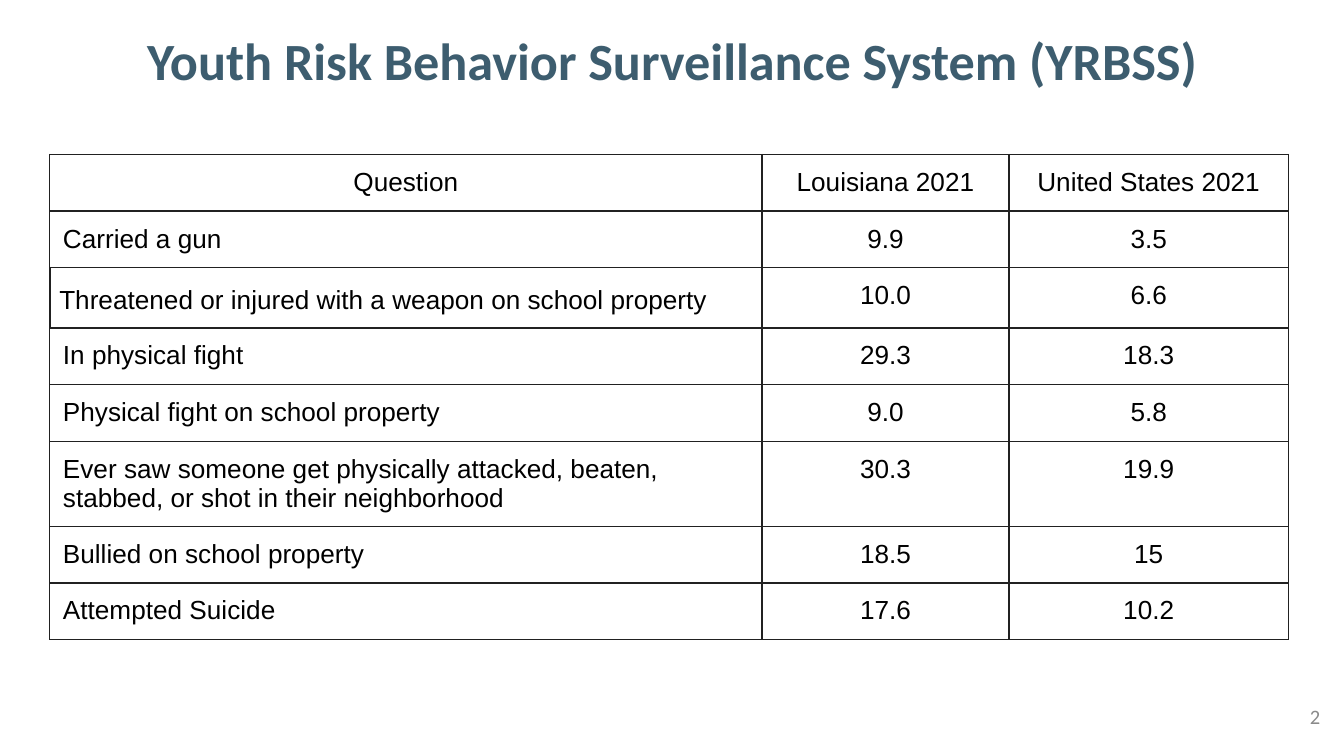
from typing import NamedTuple

from lxml.etree import SubElement
from pptx import Presentation
from pptx.dml.color import RGBColor
from pptx.enum.text import MSO_ANCHOR as Anchor, MSO_AUTO_SIZE as AutoSize, PP_ALIGN as Align
from pptx.oxml.ns import qn
from pptx.util import Cm, Pt

BORDER_COLOR = "212121"
COLUMN_WIDTHS = (13.46, 4.67, 5.28)
ROW_HEIGHT = 1.07
INSET = 0.25
TITLE_FORMAT = {"name": "Calibri", "size": Pt(28), "bold": True}
TABLE_FORMAT = {"name": "Arial", "size": Pt(14), "bold": False}
NUMBER_FORMAT = {"name": "Calibri", "size": Pt(11)}


class SurveyRow(NamedTuple):
    question: str
    louisiana: str
    united_states: str
    side_inset: float = INSET
    line_spacing: float = 1.0
    question_border: float = 0.75


HEADER = SurveyRow("Question", "Louisiana 2021", "United States 2021")
SURVEY = (
    SurveyRow("Carried a gun", "9.9", "3.5"),
    SurveyRow("Threatened or injured with a weapon on school property", "10.0", "6.6",
              side_inset=0.18, line_spacing=1.15, question_border=1),
    SurveyRow("In physical fight", "29.3", "18.3"),
    SurveyRow("Physical fight on school property", "9.0", "5.8"),
    SurveyRow("Ever saw someone get physically attacked, beaten, "
              "stabbed, or shot in their neighborhood", "30.3", "19.9"),
    SurveyRow("Bullied on school property", "18.5", "15"),
    SurveyRow("Attempted Suicide", "17.6", "10.2"),
)


def color(value: str) -> RGBColor:
    return RGBColor.from_string(value)


def write(frame, text: str, align, font_format: dict, text_color: str,
          line_spacing: float = 1.0) -> None:
    para = frame.paragraphs[0]
    para.alignment = align
    para.line_spacing = line_spacing
    span = para.add_run()
    span.text = text
    for name, value in font_format.items():
        setattr(span.font, name, value)
    span.font.color.rgb = color(text_color)


def set_borders(cell, width: float) -> None:
    """Draw all four cell edges; the lines must precede the fill in tcPr."""
    properties = cell._tc.get_or_add_tcPr()
    for position, edge in enumerate(("a:lnL", "a:lnR", "a:lnT", "a:lnB")):
        line = SubElement(properties, qn(edge), w=str(Pt(width)))
        fill = SubElement(line, qn("a:solidFill"))
        SubElement(fill, qn("a:srgbClr"), val=BORDER_COLOR)
        properties.insert(position, line)


def place(box, left: float, top: float, width: float, height: float) -> None:
    box.left, box.top, box.width, box.height = map(Cm, (left, top, width, height))


def add_title(page, text: str) -> None:
    title = page.shapes.title
    place(title, 0, 0, 25.4, 2.39)
    frame = title.text_frame
    frame.auto_size = AutoSize.NONE
    frame.vertical_anchor = Anchor.MIDDLE
    for side in ("left", "top", "right", "bottom"):
        setattr(frame, f"margin_{side}", Cm(INSET))
    write(frame, text, Align.CENTER, TITLE_FORMAT, "3D5D6F", 0.9)


def add_survey_table(page, rows: tuple[SurveyRow, ...]) -> None:
    table = page.shapes.add_table(
        len(rows), len(COLUMN_WIDTHS), Cm(0.94), Cm(2.92),
        Cm(sum(COLUMN_WIDTHS)), Cm(ROW_HEIGHT * len(rows))).table
    table.first_row = table.horz_banding = False
    for column, width in zip(table.columns, COLUMN_WIDTHS):
        column.width = Cm(width)
    for row_index, row in enumerate(rows):
        table.rows[row_index].height = Cm(ROW_HEIGHT)
        for column_index, text in enumerate(row[:3]):
            cell = table.cell(row_index, column_index)
            is_question = column_index == 0
            cell.fill.background()
            cell.margin_top = cell.margin_bottom = Cm(INSET)
            cell.margin_left = cell.margin_right = Cm(row.side_inset if is_question else INSET)
            align = Align.LEFT if is_question and row is not HEADER else Align.CENTER
            write(cell.text_frame, text, align, TABLE_FORMAT, "000000",
                  row.line_spacing if is_question else 1.0)
            set_borders(cell, row.question_border if is_question else 0.75)


def add_page_number(page, number: str) -> None:
    box = page.shapes.add_textbox(Cm(21.11), Cm(13.06), Cm(4.09), Cm(0.97))
    box.text_frame.word_wrap = True
    box.text_frame.vertical_anchor = Anchor.MIDDLE
    write(box.text_frame, number, Align.RIGHT, NUMBER_FORMAT, "8A8A8A")


def main() -> None:
    deck = Presentation()
    deck.slide_width, deck.slide_height = Cm(25.4), Cm(14.29)
    page = deck.slides.add_slide(deck.slide_layouts.get_by_name("Title Only"))
    add_title(page, "Youth Risk Behavior Surveillance System (YRBSS)")
    add_survey_table(page, (HEADER, *SURVEY))
    add_page_number(page, "2")
    deck.save("out.pptx")


if __name__ == "__main__":
    main()
